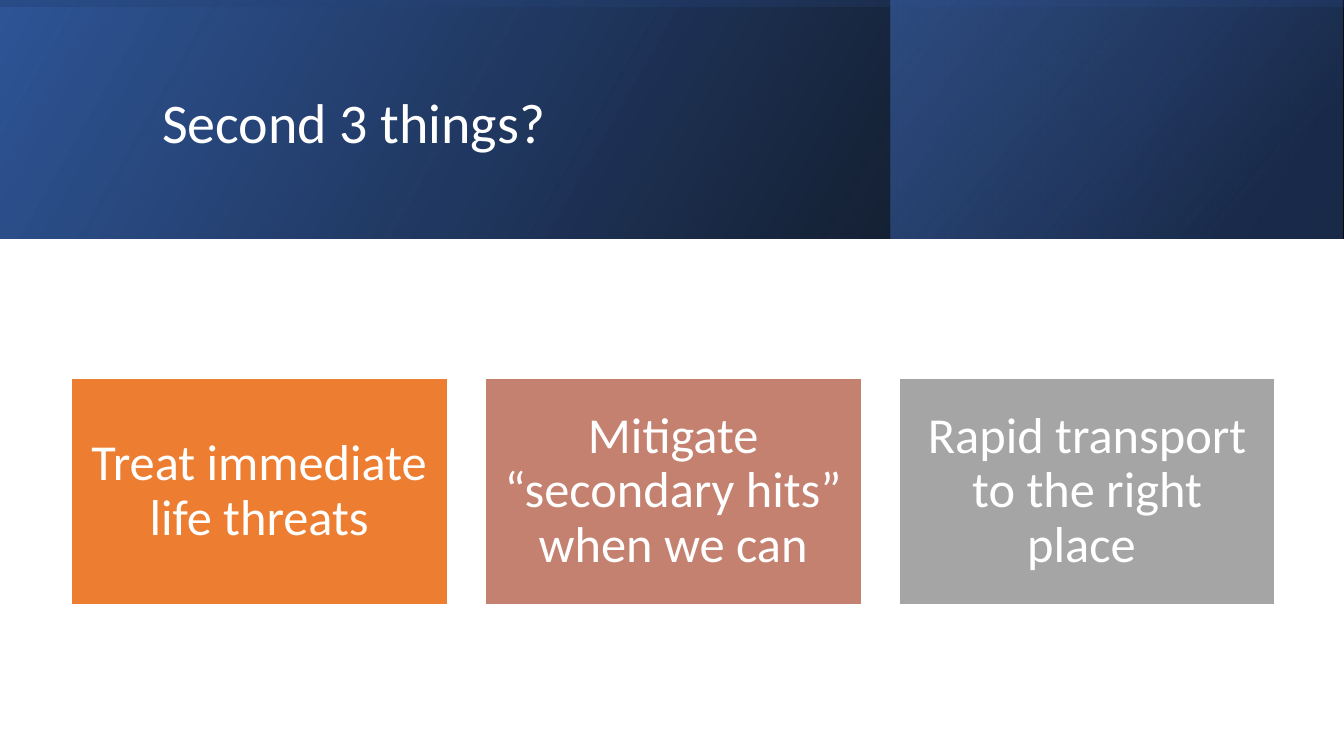
from lxml import etree
from pptx import Presentation
from pptx.dml.color import RGBColor
from pptx.enum.shapes import MSO_SHAPE
from pptx.enum.text import MSO_ANCHOR, PP_ALIGN
from pptx.oxml.ns import qn
from pptx.util import Pt

RECT = MSO_SHAPE.RECTANGLE
MIDDLE = MSO_ANCHOR.MIDDLE
CENTER = PP_ALIGN.CENTER
WHITE = "FFFFFF"
SLIDE_W, SLIDE_H = 960, 540
BAND_H = 170.64


def rgb(color):
    return RGBColor.from_string(color)


def write(tf, text, size):
    """Put one white, vertically centred paragraph in the frame and return it."""
    tf.word_wrap = True
    tf.vertical_anchor = MIDDLE
    p = tf.paragraphs[0]
    p.text = text
    p.line_spacing = 0.9
    font = p.runs[0].font
    font.name = "Calibri"
    font.size = Pt(size)
    font.color.rgb = rgb(WHITE)
    return p


prs = Presentation()
prs.slide_width, prs.slide_height = Pt(SLIDE_W), Pt(SLIDE_H)
s = prs.slides.add_slide(prs.slide_layouts[6])

# Header band: left, top, width, height, rotation, gradient angle,
# stops as (position %, colour, opacity %)
turned_left = (SLIDE_W - BAND_H) / 2
bands = [
    (0, 0, SLIDE_W, BAND_H, 0, 330, [(0, "000000", 96), (100, "2F5597", 100)]),
    (636.48, 0, 322.56, BAND_H, 0, 320, [(19, "203864", 68), (100, "4472C4", 48)]),
    (turned_left, -turned_left, BAND_H, SLIDE_W, 270, 350,
     [(23, "2F5597", 16), (99, "000000", 45)]),
]
for left, top, width, height, rotation, angle, stops in bands:
    sp = s.shapes.add_shape(RECT, Pt(left), Pt(top), Pt(width), Pt(height))
    sp.shadow.inherit = False
    sp.line.fill.background()
    sp.rotation = rotation
    sp_pr = sp._element.spPr
    sp_pr.find(qn("a:xfrm")).set("flipH", "1")
    grad = etree.Element(qn("a:gradFill"), rotWithShape="1")
    gs_list = etree.SubElement(grad, qn("a:gsLst"))
    for position, color, opacity in stops:
        gs = etree.SubElement(gs_list, qn("a:gs"), pos=str(position * 1000))
        clr = etree.SubElement(gs, qn("a:srgbClr"), val=color)
        etree.SubElement(clr, qn("a:alpha"), val=str(opacity * 1000))
    etree.SubElement(grad, qn("a:lin"), ang=str(angle * 60000), scaled="0")
    sp_pr.find(qn("a:prstGeom")).addnext(grad)

title = s.shapes.add_textbox(Pt(108.72), Pt(27.36), Pt(765.36), Pt(123.84))
write(title.text_frame, "Second 3 things?", 40)

# Three equal cards
CARD_LEFT, CARD_TOP, CARD_W, CARD_H, CARD_STEP = 50.9, 270.5, 268.6, 161.2, 295.7
cards = [
    ("Treat immediate life threats", "ED7D31"),
    ("Mitigate “secondary hits” when we can", "C48170"),
    ("Rapid transport to the right place ", "A5A5A5"),
]
for i, (text, color) in enumerate(cards):
    sp = s.shapes.add_shape(RECT, Pt(CARD_LEFT + i * CARD_STEP), Pt(CARD_TOP),
                            Pt(CARD_W), Pt(CARD_H))
    sp.shadow.inherit = False
    sp.fill.solid()
    sp.fill.fore_color.rgb = rgb(color)
    sp.line.color.rgb = rgb(WHITE)
    sp.line.width = Pt(1)
    tf = sp.text_frame
    tf.margin_left = tf.margin_right = tf.margin_top = tf.margin_bottom = Pt(10.8)
    p = write(tf, text, 36)
    p.alignment = CENTER

prs.save("out.pptx")
